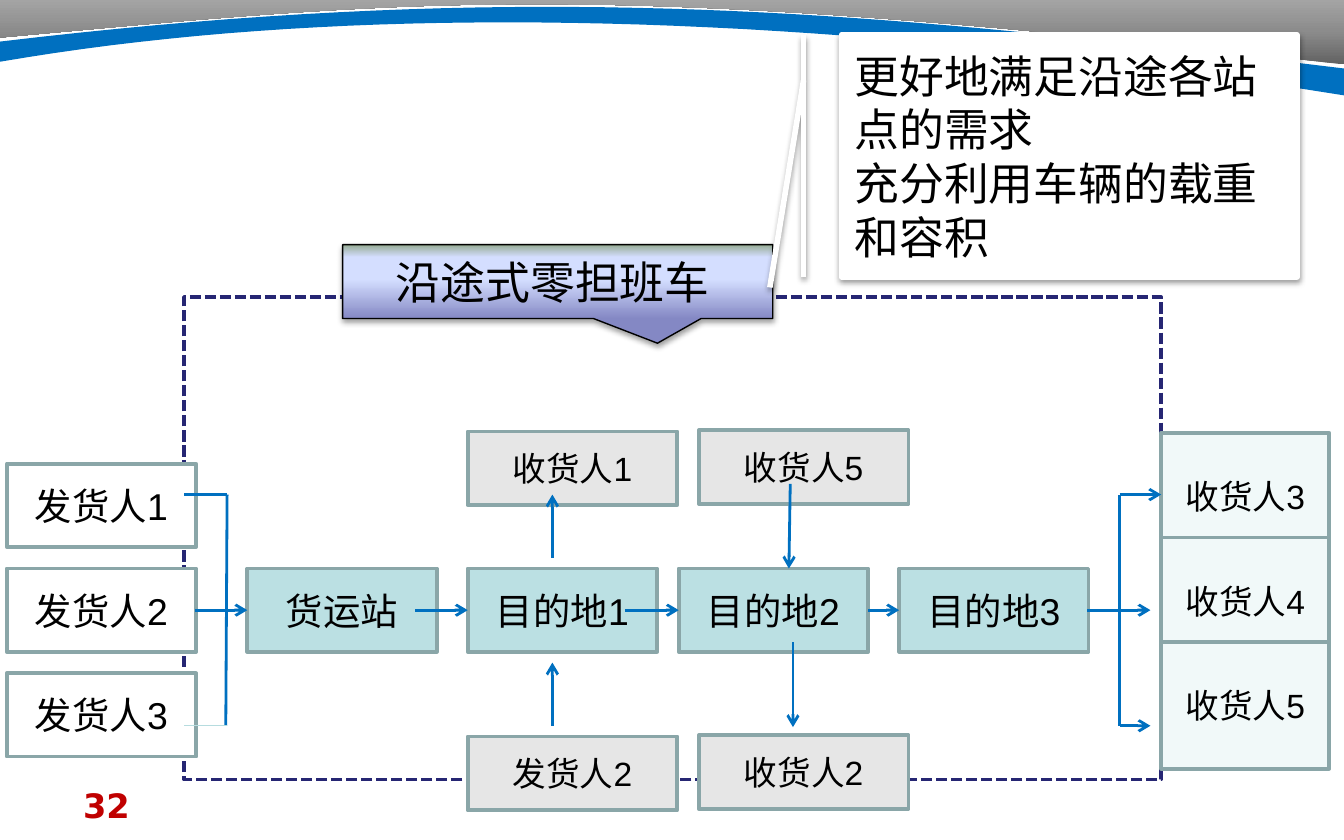
from lxml import etree
from pptx import Presentation
from pptx.dml.color import RGBColor
from pptx.enum.dml import MSO_LINE
from pptx.enum.shapes import MSO_CONNECTOR, MSO_SHAPE
from pptx.enum.text import MSO_ANCHOR, PP_ALIGN
from pptx.oxml.ns import qn
from pptx.util import Inches, Pt

RECT = MSO_SHAPE.RECTANGLE
BANNER = MSO_SHAPE.RECTANGULAR_CALLOUT
NOTE = MSO_SHAPE.LINE_CALLOUT_1_BORDER_AND_ACCENT_BAR
STRAIGHT = MSO_CONNECTOR.STRAIGHT
DASH = MSO_LINE.SQUARE_DOT
LEFT, CENTER = PP_ALIGN.LEFT, PP_ALIGN.CENTER
TOP, MIDDLE = MSO_ANCHOR.TOP, MSO_ANCHOR.MIDDLE

COLORS = {
    "white": "FFFFFF", "black": "000000", "blue": "0070C0", "navy": "262673",
    "edge": "8AA6A8", "stop": "BBE0E3", "side": "E6E6E6", "end": "F1F9F9",
    "pale": "B6DCDF", "red": "C00000",
}
GREY = [(0, "626262"), (50, "8C8C8C"), (100, "A6A6A6")]
VIOLET = [(0, "8488C4"), (53, "D4DEFF"), (83, "D4DEFF"), (100, "96AB94")]
SOFT = ("black", 38, 3.1, 1.6)
CRISP = ("white", 100, 0, 2)


def dress(shape, fill=None, line=None, width=2, shadow=None):
    """Fill is a colour name or a list of stops running from bottom to top;
    shadow is colour name, opacity in percent, blur and drop in points."""
    if isinstance(fill, list):
        shape.fill.gradient()
        shape.fill.gradient_angle = 90
        stops = shape._element.spPr.find(qn("a:gradFill")).find(qn("a:gsLst"))
        for old in list(stops):
            stops.remove(old)
        for pos, tint in fill:
            stop = etree.SubElement(stops, qn("a:gs"), pos=str(pos * 1000))
            etree.SubElement(stop, qn("a:srgbClr"), val=tint)
    elif fill:
        shape.fill.solid()
        shape.fill.fore_color.rgb = RGBColor.from_string(COLORS[fill])
    else:
        shape.fill.background()
    if line:
        shape.line.color.rgb = RGBColor.from_string(COLORS[line])
        shape.line.width = Pt(width)
    else:
        shape.line.fill.background()
    shape.shadow.inherit = False
    if shadow:
        tint, alpha, blur, drop = shadow
        effects = shape._element.spPr.find(qn("a:effectLst"))
        outer = etree.SubElement(effects, qn("a:outerShdw"), blurRad=str(Pt(blur)),
                                 dist=str(Pt(drop)), dir="5400000", rotWithShape="0")
        color = etree.SubElement(outer, qn("a:srgbClr"), val=COLORS[tint])
        etree.SubElement(color, qn("a:alpha"), val=str(alpha * 1000))


def write(shape, lines, size, align=CENTER, anchor=MIDDLE, color="black",
          name="Arial", bold=False):
    frame = shape.text_frame
    frame.word_wrap = True
    frame.vertical_anchor = anchor
    frame.text = "\n".join(lines)
    look = {"size": Pt(size), "name": name, "bold": bold}
    for para in frame.paragraphs:
        para.alignment = align
        for key, value in look.items():
            setattr(para.font, key, value)
        para.font.color.rgb = RGBColor.from_string(COLORS[color])


deck = Presentation()
deck.slide_width, deck.slide_height = Inches(10), Inches(6.25)
slide = deck.slides.add_slide(deck.slide_layouts[6])
shapes = slide.shapes

# Header bands: one cubic curve each, closed by straight edges
bands = [
    ([(10, 0.48), (4.43, -0.17), (3.08, 0), (0, 0.28)],
     [(0, -0.02), (10, -0.02)], GREY, CRISP),
    ([(0, 0.31), (4.03, -0.17), (6.52, 0.09), (10, 0.51)], [(10, 0.71)], "blue", None),
]
lower = [(10, 0.71), (6.05, 0.08), (2.67, 0), (0, 0.46)]
STEPS = 40
for curve, edge, fill, shadow in bands:
    points = []
    for bend in [curve, lower] if fill == "blue" else [curve]:
        for step in range(STEPS + 1):
            t = step / STEPS
            parts = ((1 - t) ** 3, 3 * t * (1 - t) ** 2, 3 * t * t * (1 - t), t ** 3)
            points.append([sum(w * p[axis] for w, p in zip(parts, bend)) for axis in (0, 1)])
        if bend is curve:
            points += edge
    points = [(Inches(x), Inches(y)) for x, y in points]
    path = shapes.build_freeform(*points[0])
    path.add_line_segments(points[1:], close=True)
    dress(path.convert_to_shape(), fill, shadow=shadow)

number = shapes.add_textbox(Inches(0.52), Inches(5.79), Inches(2.33), Inches(0.33))
write(number, ["32"], 18, LEFT, TOP, "red", "DejaVu Sans", True)

# Route frame and its banner
frame = shapes.add_shape(RECT, Inches(1.37), Inches(2.21), Inches(7.27), Inches(3.59))
dress(frame, line="navy")
frame.line.dash_style = DASH

banner = shapes.add_shape(BANNER, Inches(2.55), Inches(1.82), Inches(3.2), Inches(0.55))
banner.adjustments[0], banner.adjustments[1] = 0.232, 0.834
dress(banner, VIOLET, "black", 0.75, SOFT)
write(banner, ["沿途式零担班车 "], 24, name="Noto Sans CJK SC")

# Boxes: width, height, fill, text size, then left, top and label of each
ROW, PITCH = 4.23, 0.78
groups = [
    (1.41, 0.62, "white", 20,
     [(0.05, ROW + (i - 1) * PITCH, f"发货人{i + 1}") for i in range(3)]),
    (1.25, 0.94, "end", 18,
     [(8.64, 3.22 + i * PITCH, f"收货人{i + 3}") for i in range(3)]),
    (1.41, 0.62, "stop", 20,
     [(1.84, ROW, "货运站"), (3.48, ROW, "目的地1"),
      (5.05, ROW, "目的地2"), (6.69, ROW, "目的地3")]),
    (1.56, 0.55, "side", 18,
     [(3.48, 3.21, "收货人1"), (3.48, 5.48, "发货人2"),
      (5.2, 3.2, "收货人5"), (5.2, 5.47, "收货人2")]),
]
for width, height, fill, size, boxes in groups:
    for left, top, label in boxes:
        box = shapes.add_shape(RECT, Inches(left), Inches(top), Inches(width), Inches(height))
        dress(box, fill, "edge")
        write(box, [label], size)

# Links: start, end, colour, width, arrowhead
MID, HIGH, LOW = 4.54, 3.68, 5.4
arrows = [
    (1.45, MID, 1.84, MID), (3.09, MID, 3.48, MID), (4.65, MID, 5.05, MID),
    (6.46, MID, 6.69, MID), (8.09, MID, 8.56, MID),
    (8.33, HIGH, 8.64, HIGH), (8.33, LOW, 8.56, LOW),
    (4.11, LOW, 4.11, 4.93), (4.11, 4.15, 4.11, HIGH),
    (5.9, 4.78, 5.9, 5.41), (5.88, 3.6, 5.87, 4.23),
]
plain = [(1.69, HIGH, 1.68, LOW), (1.37, HIGH, 1.69, HIGH), (8.33, HIGH, 8.33, LOW)]
links = [(ends, "blue", 1.5, True) for ends in arrows]
links += [(ends, "blue", 1.5, False) for ends in plain]
links.append(((1.37, LOW, 1.69, LOW), "pale", 0.75, False))
for ends, color, width, arrow in links:
    link = shapes.add_connector(STRAIGHT, *[Inches(v) for v in ends])
    link.line.color.rgb = RGBColor.from_string(COLORS[color])
    link.line.width = Pt(width)
    props = link._element.spPr
    if arrow:
        etree.SubElement(props.find(qn("a:ln")), qn("a:tailEnd"), type="arrow")
    etree.SubElement(props, qn("a:effectLst"))

# Benefits note
note = shapes.add_shape(NOTE, Inches(6.26), Inches(0.26), Inches(3.39), Inches(1.8))
for i, value in enumerate((0.188, -0.083, 1.044, -0.157)):
    note.adjustments[i] = value
dress(note, "white", "white", 3, SOFT)
write(note, ["更好地满足沿途各站点的需求", "充分利用车辆的载重和容积"], 24, LEFT)

deck.save("out.pptx")
